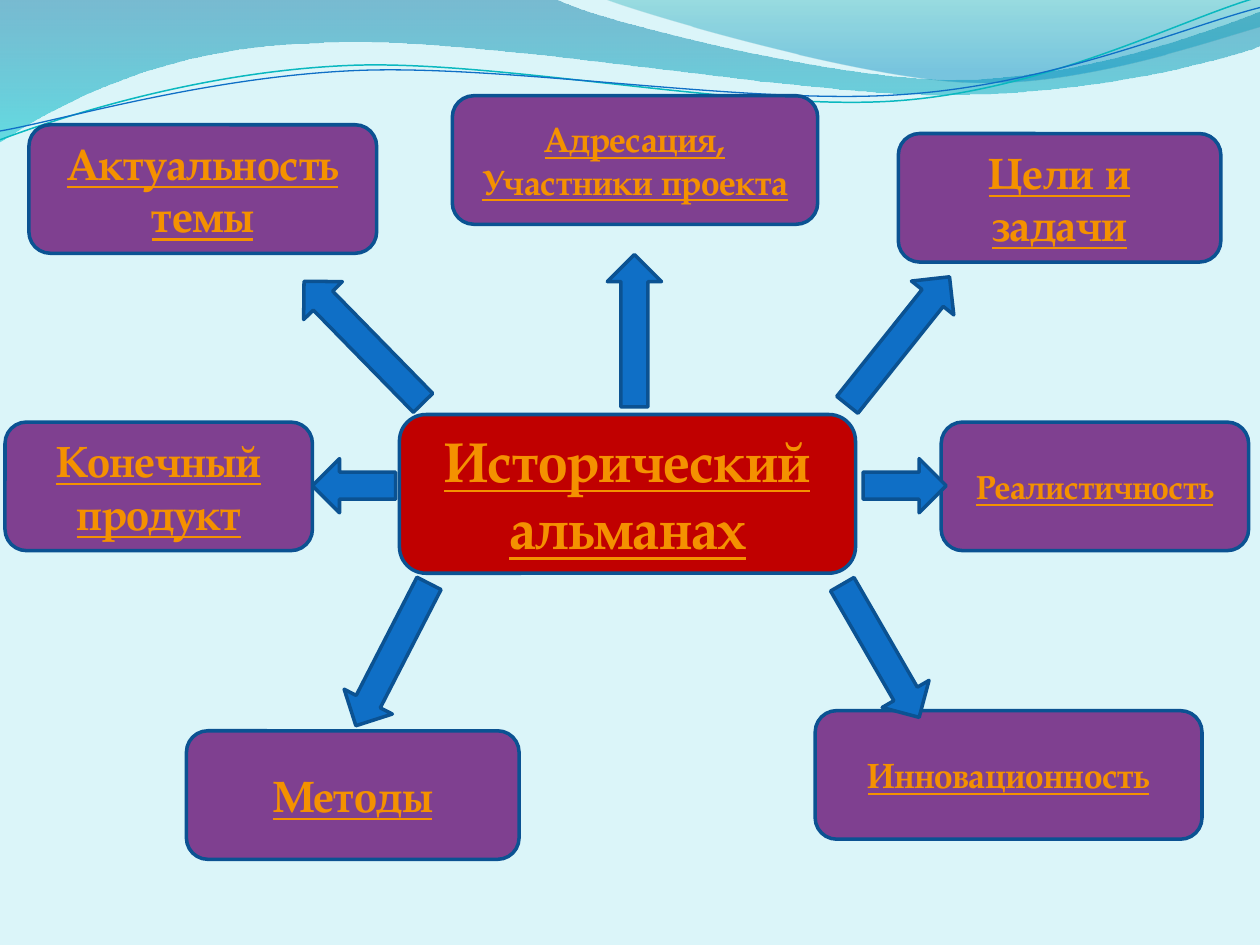
from pptx import Presentation
from pptx.dml.color import RGBColor
from pptx.enum.shapes import MSO_SHAPE
from pptx.enum.text import MSO_ANCHOR, PP_ALIGN
from pptx.oxml.ns import qn
from pptx.util import Inches, Pt
from lxml import etree

FONT = "TeX Gyre Pagella"


def rgb(value):
    return RGBColor.from_string(value)


def add_curve(s, start, segments, close):
    points = [(Inches(seg[i]), Inches(seg[i + 1]))
              for seg in segments for i in range(0, len(seg), 2)]
    fb = s.shapes.build_freeform(Inches(start[0]), Inches(start[1]))
    fb.add_line_segments(points, close=close)
    sp = fb.convert_to_shape()
    sp.shadow.inherit = False
    lines = iter(list(sp._element.spPr.iter(qn("a:lnTo"))))
    for seg in segments:
        first = next(lines)
        if len(seg) == 6:
            first.tag = qn("a:cubicBezTo")
            for line in (next(lines), next(lines)):
                first.append(line[0])
                line.getparent().remove(line)
    return sp


prs = Presentation()
prs.slide_width, prs.slide_height = Inches(10), Inches(7.5)
s = prs.slides.add_slide(prs.slide_layouts[6])
s.background.fill.solid()
s.background.fill.fore_color.rgb = rgb("DBF5F9")

waves = [
    ((0, 0), [(4.4, -0.01), (4.76, 0.17, 6.64, 0.63, 7.58, 0.63),
              (8.53, 0.63, 9.58, 0.26, 10, 0.09), (10.01, 0.36),
              (9.83, 0.44, 8.7, 0.76, 7.46, 0.75), (6.22, 0.75, 3.82, 0.28, 2.57, 0.34),
              (1.29, 0.36, 0.46, 0.83, -0.01, 1.13)],
     [(0, "0074A1", 45), (1, "00C6CF", 55)]),
    ((4.79, -0.01), [(5.09, 0.11, 6.82, 0.62, 7.69, 0.65),
                     (8.56, 0.69, 9.61, 0.32, 10, 0.21), (10, 0)],
     [(0, "00A1A9", 30), (0.8, "008BBF", 45)]),
]
for start, segments, stops in waves:
    sp = add_curve(s, start, segments, True)
    sp.line.fill.background()
    sp.fill.gradient()
    sp.fill.gradient_angle = 270
    for stop, (position, color, opacity) in zip(sp.fill.gradient_stops, stops):
        stop.position = position
        stop.color.rgb = rgb(color)
    for clr, (_, _, opacity) in zip(sp._element.spPr.iter(qn("a:srgbClr")), stops):
        etree.SubElement(clr, qn("a:alpha")).set("val", str(opacity * 1000))

threads = [
    ((0, 1.11), [(0.48, 0.93, 1.58, 0.57, 2.77, 0.52), (3.95, 0.47, 5.93, 0.89, 7.13, 0.8),
                 (8.33, 0.71, 9.38, 0.15, 9.98, -0.02)], "0AB8BF", 0.85),
    ((0, 1.04), [(0.47, 0.96, 1.64, 0.61, 2.83, 0.56), (4.03, 0.51, 5.97, 0.84, 7.17, 0.75),
                 (8.36, 0.67, 9.41, 0.21, 10, 0.06)], "0F6FC6", 0.75),
]
for start, segments, color, width in threads:
    sp = add_curve(s, start, segments, False)
    sp.fill.background()
    sp.line.color.rgb = rgb(color)
    sp.line.width = Pt(width)

topics = [
    ("Исторический альманах", 3.17, 3.29, 3.62, 1.26, 32, "C00000"),
    ("Актуальность темы", 0.23, 0.99, 2.76, 1.02, 25, "7F4090"),
    ("Адресация, Участники проекта", 3.59, 0.76, 2.9, 1.02, 20, "7F4090"),
    ("Инновационность", 6.47, 5.64, 3.07, 1.02, 20, "7F4090"),
    ("Реалистичность", 7.47, 3.35, 2.44, 1.02, 19, "7F4090"),
    ("Цели и задачи", 7.13, 1.06, 2.56, 1.02, 25, "7F4090"),
    ("Методы", 1.48, 5.8, 2.64, 1.02, 25, "7F4090"),
    ("Конечный продукт", 0.04, 3.35, 2.44, 1.02, 25, "7F4090"),
]
arrows = [
    (MSO_SHAPE.LEFT_ARROW, 2.21, 2.5, 1.35, 45.6),
    (MSO_SHAPE.LEFT_ARROW, 2.48, 3.64, 0.66, 0),
    (MSO_SHAPE.LEFT_ARROW, 4.43, 2.41, 1.21, 90),
    (MSO_SHAPE.LEFT_ARROW, 6.48, 2.49, 1.3, 128.6),
    (MSO_SHAPE.LEFT_ARROW, 6.38, 4.95, 1.22, 240),
    (MSO_SHAPE.RIGHT_ARROW, 6.85, 3.64, 0.66, 0),
    (MSO_SHAPE.LEFT_ARROW, 2.48, 4.98, 1.27, 297.2),
]
blocks = [(MSO_SHAPE.ROUNDED_RECTANGLE, x, y, w, h, 0, fill, text, size)
          for text, x, y, w, h, size, fill in topics]
blocks += [(kind, x, y, w, 0.43, angle, "0F6FC6", "", 0) for kind, x, y, w, angle in arrows]

for kind, x, y, w, h, angle, fill, text, size in blocks:
    sp = s.shapes.add_shape(kind, Inches(x), Inches(y), Inches(w), Inches(h))
    sp.rotation = angle
    sp.shadow.inherit = False
    sp.fill.solid()
    sp.fill.fore_color.rgb = rgb(fill)
    sp.line.color.rgb = rgb("0B5292")
    sp.line.width = Pt(2)
    if text:
        tf = sp.text_frame
        tf.text = text
        tf.word_wrap = True
        tf.vertical_anchor = MSO_ANCHOR.MIDDLE
        p = tf.paragraphs[0]
        p.alignment = PP_ALIGN.CENTER
        font = p.runs[0].font
        font.name, font.size = FONT, Pt(size)
        font.bold = font.underline = True
        font.color.rgb = rgb("F49100")

prs.save("out.pptx")
